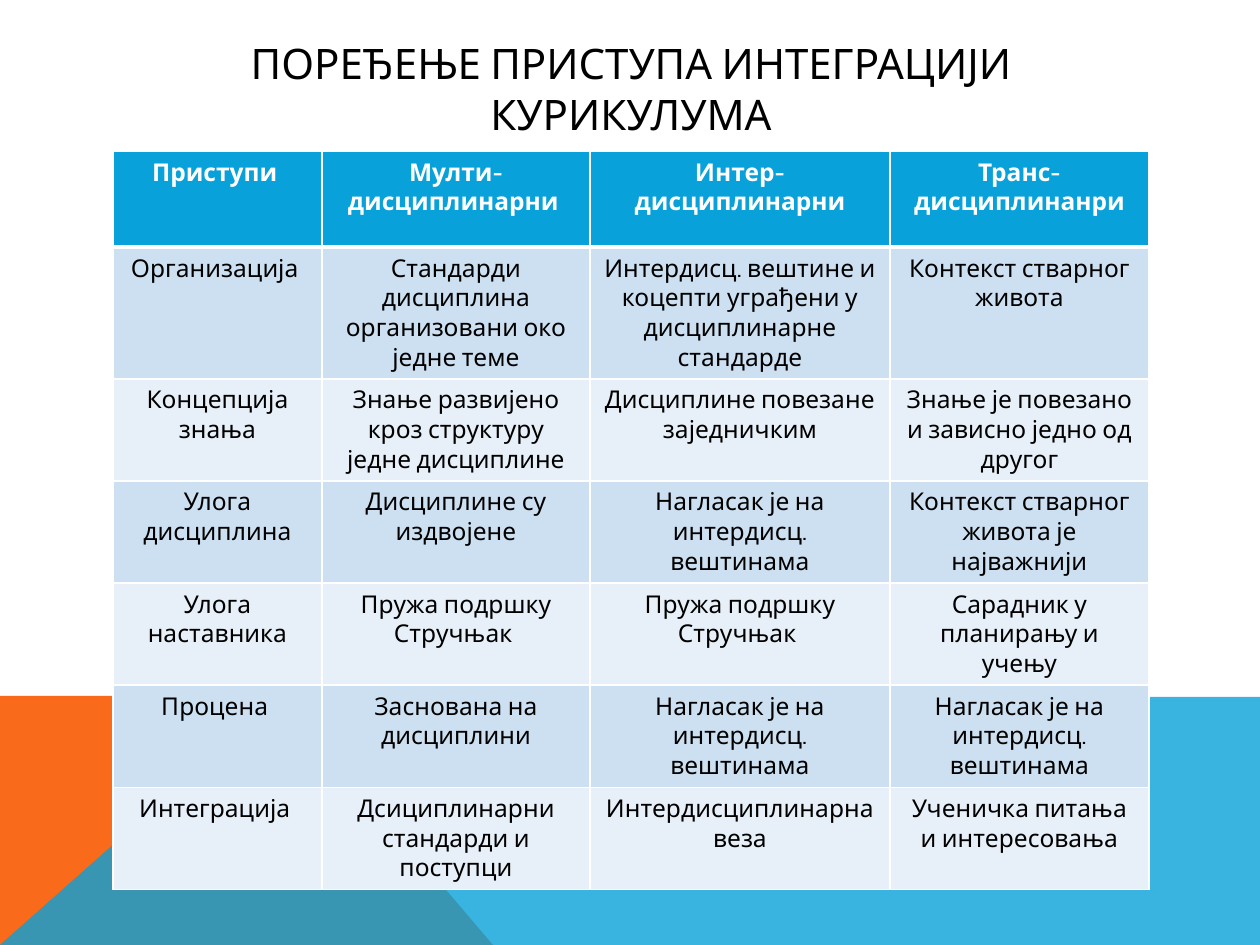
import dataclasses

import pptx
import pptx.dml.color
import pptx.enum.text
import pptx.oxml
import pptx.oxml.ns
import pptx.util

SCALE = 914400 / 126
ALIGN = pptx.enum.text.PP_ALIGN


@dataclasses.dataclass(frozen=True)
class Theme:
    font: str = "Cabin"
    title: int = 24
    body: int = 14
    ink: str = "000000"
    white: str = "FFFFFF"
    orange: str = "F96A1B"
    blue: str = "08A1D9"
    bands: tuple[str, str] = ("CCE0F1", "E7F0F8")
    thin: int = 1
    thick: int = 3


@dataclasses.dataclass(frozen=True)
class Wedge:
    points: tuple[tuple[int, int], ...]
    color: str
    alpha: int = 100


THEME = Theme()
WEDGES = (
    Wedge(((0, 945), (0, 696), (281, 696), (493, 945)), THEME.orange),
    Wedge(((0, 945), (281, 696), (1260, 697), (1260, 945)), THEME.blue, 80),
)
TITLE = "ПОРЕЂЕЊЕ ПРИСТУПА ИНТЕГРАЦИЈИ КУРИКУЛУМА"
WIDTHS = (209, 268, 300, 259)
ROW = 96
SKILLS = "Нагласак је на интердисц. вештинама"
EXPERT = "Пружа подршку\nСтручњак "
ROWS = (
    ("Приступи ", "Мулти-\nдисциплинарни ", "Интер-\nдисциплинарни",
     "Транс-\nдисциплинанри"),
    ("Организација ", "Стандарди дисциплина организовани око једне теме",
     "Интердисц. вештине и коцепти уграђени у дисциплинарне стандарде",
     "Контекст стварног живота"),
    ("Концепција знања", "Знање развијено кроз структуру једне дисциплине",
     "Дисциплине повезане заједничким",
     "Знање је повезано и зависно једно од другог"),
    ("Улога дисциплина", "Дисциплине су издвојене", SKILLS,
     "Контекст стварног живота је најважнији"),
    ("Улога наставника", EXPERT, EXPERT, "Сарадник у планирању и учењу"),
    ("Процена ", "Заснована на дисциплини", SKILLS, SKILLS),
    ("Интеграција ", "Дсициплинарни стандарди и поступци",
     "Интердисциплинарна веза", "Ученичка питања и интересовања"),
)


def px(size: float) -> int:
    return round(size * SCALE)


def rgb(color: str) -> pptx.dml.color.RGBColor:
    return pptx.dml.color.RGBColor.from_string(color)


def write(frame, text: str, size: int, color: str, bold: bool = False) -> None:
    frame.text = text
    for para in frame.paragraphs:
        para.alignment = ALIGN.CENTER
        para.font.name = THEME.font
        para.font.size = pptx.util.Pt(size)
        para.font.bold = bold
        para.font.color.rgb = rgb(color)


def draw_wedge(slide, wedge: Wedge) -> None:
    start, *rest = wedge.points
    pen = slide.shapes.build_freeform(*start, scale=SCALE)
    pen.add_line_segments(rest, close=True)
    shape = pen.convert_to_shape()
    shape.shadow.inherit = False
    shape.line.fill.background()
    shape.fill.solid()
    shape.fill.fore_color.rgb = rgb(wedge.color)
    if wedge.alpha < 100:
        tint = shape.element.spPr.find(".//" + pptx.oxml.ns.qn("a:srgbClr"))
        tint.append(pptx.oxml.parse_xml(
            f'<a:alpha {pptx.oxml.ns.nsdecls("a")} val="{wedge.alpha * 1000}"/>'))


def set_edges(cell, top: int, base: int) -> None:
    """Give a cell white borders, with top and bottom widths in points."""
    props = cell._tc.get_or_add_tcPr()
    widths = {"L": THEME.thin, "R": THEME.thin, "T": top, "B": base}
    for spot, (side, width) in enumerate(widths.items()):
        props.insert(spot, pptx.oxml.parse_xml(
            f'<a:ln{side} {pptx.oxml.ns.nsdecls("a")} w="{width * 12700}">'
            f'<a:solidFill><a:srgbClr val="{THEME.white}"/></a:solidFill>'
            f'</a:ln{side}>'))


def draw_title(slide) -> None:
    title = slide.shapes.title
    title.left, title.top, title.width, title.height = map(px, (113, 50, 1036, 76))
    frame = title.text_frame
    frame.word_wrap = True
    frame.auto_size = pptx.enum.text.MSO_AUTO_SIZE.NONE
    frame.vertical_anchor = pptx.enum.text.MSO_ANCHOR.MIDDLE
    write(frame, TITLE, THEME.title, THEME.ink)
    title.element.getparent().append(title.element)


def draw_table(slide) -> None:
    table = slide.shapes.add_table(
        len(ROWS), len(WIDTHS), px(113), px(151),
        px(sum(WIDTHS)), px(ROW * len(ROWS))).table
    for col, width in zip(table.columns, WIDTHS):
        col.width = px(width)
    for r, texts in enumerate(ROWS):
        table.rows[r].height = px(ROW)
        head = r == 0
        for c, text in enumerate(texts):
            cell = table.cell(r, c)
            write(cell.text_frame, text, THEME.body,
                  THEME.white if head else THEME.ink, head)
            set_edges(cell, THEME.thick if r == 1 else THEME.thin,
                      THEME.thick if head else THEME.thin)
            cell.fill.solid()
            cell.fill.fore_color.rgb = rgb(
                THEME.blue if head else THEME.bands[(r - 1) % 2])


def main() -> None:
    deck = pptx.Presentation()
    deck.slide_width, deck.slide_height = px(1260), px(945)
    slide = deck.slides.add_slide(deck.slide_layouts[5])
    for wedge in WEDGES:
        draw_wedge(slide, wedge)
    draw_title(slide)
    draw_table(slide)
    deck.save("out.pptx")


if __name__ == "__main__":
    main()
